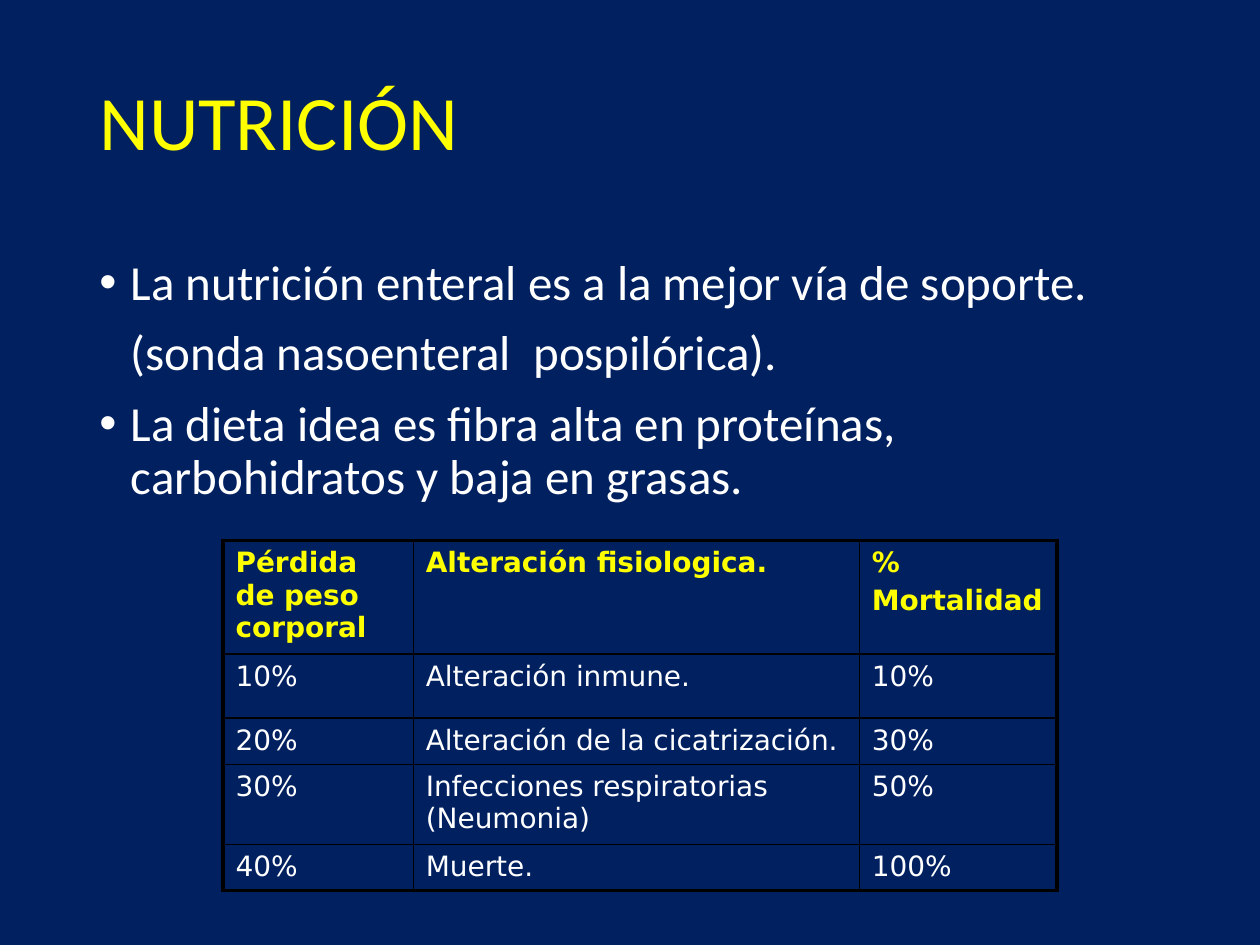
from lxml.etree import SubElement
from pptx import Presentation
from pptx.dml.color import RGBColor
from pptx.enum.text import MSO_ANCHOR
from pptx.oxml.ns import qn
from pptx.util import Inches, Pt

COLORS = {"bg": "002060", "accent": "FFFF00", "text": "FFFFFF", "border": "000000"}
BODY = [  # text, bulleted
    ("La nutrición enteral es a la mejor vía de soporte.", True),
    ("(sonda nasoenteral  pospilórica).", False),
    ("La dieta idea es fibra alta en proteínas, carbohidratos y baja en grasas.", True),
]
ROWS = [
    ("Pérdida de peso corporal", "Alteración fisiologica.", "%\nMortalidad"),
    ("10%", "Alteración inmune.", "10%"),
    ("20%", "Alteración de la cicatrización.", "30%"),
    ("30%", "Infecciones respiratorias (Neumonia)", "50%"),
    ("40%", "Muerte.", "100%"),
]
COL_WIDTHS = (1.51, 3.54, 1.57)
ROW_HEIGHTS = (0.87, 0.51, 0.36, 0.61, 0.36)
THIN, THICK = 1, 2.25


def style(p, font, size, color, bold=False):
    for r in p.runs:
        r.font.name = font
        r.font.size = Pt(size)
        r.font.bold = bold
        r.font.color.rgb = RGBColor.from_string(COLORS[color])


def add_text_frame(s, box):
    tf = s.shapes.add_textbox(*map(Inches, box)).text_frame
    tf.word_wrap = True
    return tf


def add_title(s, box):
    tf = add_text_frame(s, box)
    tf.vertical_anchor = MSO_ANCHOR.MIDDLE
    tf.text = "NUTRICIÓN"
    p = tf.paragraphs[0]
    p.line_spacing = 0.9
    style(p, "Calibri", 44, "accent")


def set_indent(p, bulleted):
    pPr = p._p.get_or_add_pPr()
    pPr.set("marL", str(Inches(0.25)))
    pPr.set("indent", str(Inches(-0.25) if bulleted else 0))
    if bulleted:
        SubElement(pPr, qn("a:buFont"), typeface="Arial")
        SubElement(pPr, qn("a:buChar"), char="•")
    else:
        SubElement(pPr, qn("a:buNone"))


def add_body(s, box):
    tf = add_text_frame(s, box)
    tf.text = "\n".join(text for text, _ in BODY)
    for i, (p, (_, bulleted)) in enumerate(zip(tf.paragraphs, BODY)):
        set_indent(p, bulleted)
        p.line_spacing = 0.9
        if i:
            p.space_before = Pt(10)
        style(p, "Calibri", 28, "text")


def set_borders(cell, widths):
    """Draw the left, right, top and bottom lines, with widths in points."""
    tcPr = cell._tc.get_or_add_tcPr()
    for side, width in zip("LRTB", widths):
        ln = SubElement(tcPr, qn(f"a:ln{side}"), w=str(Pt(width)))
        fill = SubElement(ln, qn("a:solidFill"))
        SubElement(fill, qn("a:srgbClr"), val=COLORS["border"])


def add_mortality_table(s, left, top):
    n_rows, n_cols = len(ROWS), len(COL_WIDTHS)
    box = (left, top, sum(COL_WIDTHS), sum(ROW_HEIGHTS))
    table = s.shapes.add_table(n_rows, n_cols, *map(Inches, box)).table
    table.horz_banding = False
    for col, width in zip(table.columns, COL_WIDTHS):
        col.width = Inches(width)
    for i, (row, height) in enumerate(zip(table.rows, ROW_HEIGHTS)):
        row.height = Inches(height)
        for j, cell in enumerate(row.cells):
            outer = (j == 0, j == n_cols - 1, i == 0, i == n_rows - 1)
            set_borders(cell, [THICK if edge else THIN for edge in outer])
            cell.fill.background()
            cell.text_frame.text = ROWS[i][j]
            for k, p in enumerate(cell.text_frame.paragraphs):
                if k:
                    p.space_before = Pt(3.2)
                style(p, "DejaVu Sans", 16, "text" if i else "accent", bold=i == 0)


def main():
    prs = Presentation()
    prs.slide_width, prs.slide_height = Inches(10), Inches(7.5)
    s = prs.slides.add_slide(prs.slide_layouts[6])
    s.background.fill.solid()
    s.background.fill.fore_color.rgb = RGBColor.from_string(COLORS["bg"])
    add_title(s, (0.69, 0.45, 8.62, 1.09))
    add_body(s, (0.69, 2, 8.62, 4.76))
    add_mortality_table(s, 1.77, 4.29)
    prs.save("out.pptx")


if __name__ == "__main__":
    main()
